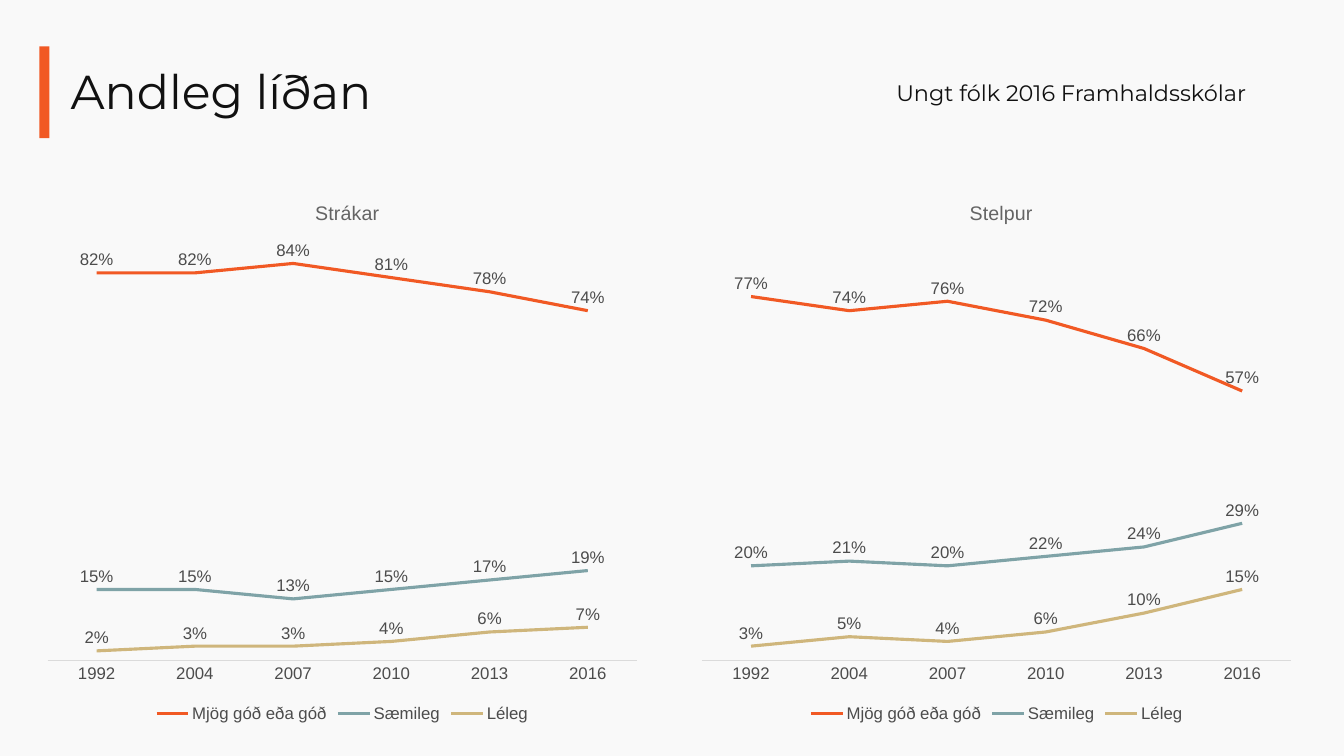
from pptx import Presentation
from pptx.chart.data import CategoryChartData as Data
from pptx.dml.color import RGBColor as Color
from pptx.enum.chart import XL_CHART_TYPE as Kind, XL_LABEL_POSITION as Spot
from pptx.enum.chart import XL_LEGEND_POSITION as Side, XL_TICK_LABEL_POSITION as Tick
from pptx.enum.chart import XL_TICK_MARK as Mark
from pptx.enum.shapes import MSO_SHAPE as Shape
from pptx.enum.text import MSO_ANCHOR as Anchor, PP_ALIGN as Align
from pptx.oxml import parse_xml
from pptx.oxml.ns import nsdecls, qn
from pptx.util import Inches, Pt

theme = {
    "back": "F9F9F9", "ink": "111111", "text": "4C4C4C", "head": "646464",
    "rule": "DBDBDB", "lines": ["F15924", "7FA3A7", "CFB67C"],
    "title": 34, "note": 16, "name": 14, "label": 12, "base": 10,
    "serif": "Montserrat", "plain": "Arial",
}


def style(font, face, size, color):
    font.name, font.size, font.bold = theme[face], Pt(theme[size]), False
    font.color.rgb = Color.from_string(theme[color])


def place(node, index, **parts):
    """Set a manual layout, given as shares of the chart's size."""
    for old in node.findall(qn("c:layout")):
        node.remove(old)
    inner = '<c:layoutTarget val="inner"/>' if "w" in parts else ""
    modes = "".join(f'<c:{key}Mode val="edge"/>' for key in "xy")
    sizes = "".join(f'<c:{key} val="{val}"/>' for key, val in parts.items())
    node.insert(index, parse_xml(
        f'<c:layout {nsdecls("c")}><c:manualLayout>{inner}{modes}{sizes}'
        '</c:manualLayout></c:layout>'))


deck = Presentation()
deck.slide_width, deck.slide_height = Inches(13.33), Inches(7.5)
slide = deck.slides.add_slide(deck.slide_layouts[5])
slide.background.fill.solid()
slide.background.fill.fore_color.rgb = Color.from_string(theme["back"])

# Accent bar
bar = slide.shapes.add_shape(Shape.RECTANGLE, Inches(0.39), Inches(0.46),
                             Inches(0.1), Inches(0.91))
bar.shadow.inherit = False
bar.fill.solid()
bar.fill.fore_color.rgb = Color.from_string(theme["lines"][0])
bar.line.fill.background()

# Title
title = slide.shapes.title
title.left, title.top = Inches(0.6), Inches(0.4)
title.width, title.height = Inches(12.34), Inches(1.06)
title.text_frame.text = "Andleg líðan"
title.text_frame.vertical_anchor = Anchor.MIDDLE
line = title.text_frame.paragraphs[0]
line.alignment, line.line_spacing = Align.LEFT, 0.9
style(line.runs[0].font, "serif", "title", "ink")

# Survey name
note = slide.shapes.add_textbox(Inches(8.89), Inches(0.79),
                                Inches(5.05), Inches(0.27))
frame = note.text_frame
frame.word_wrap = True
frame.margin_left = frame.margin_right = frame.margin_top = frame.margin_bottom = 0
frame.text = "Ungt fólk 2016 Framhaldsskólar"
style(frame.paragraphs[0].runs[0].font, "serif", "note", "ink")

# Survey results in percent
years = ["1992", "2004", "2007", "2010", "2013", "2016"]
moods = ["Mjög góð eða góð", "Sæmileg", "Léleg"]
groups = {
    "Strákar": [[82, 82, 84, 81, 78, 74], [15, 15, 13, 15, 17, 19],
                [2, 3, 3, 4, 6, 7]],
    "Stelpur": [[77, 74, 76, 72, 66, 57], [20, 21, 20, 22, 24, 29],
                [3, 5, 4, 6, 10, 15]],
}

# One line chart per group
for col, (group, rows) in enumerate(groups.items()):
    data = Data(number_format="0%")
    data.categories = years
    for mood, row in zip(moods, rows):
        data.add_series(mood, [val / 100 for val in row])
    chart = slide.shapes.add_chart(
        Kind.LINE, Inches(0.35 + 6.49 * col), Inches(1.73),
        Inches(6.09), Inches(5.48), data).chart
    style(chart.font, "plain", "base", "ink")

    # Chart title and legend
    head = chart.chart_title
    head.text_frame.text = group
    style(head.text_frame.paragraphs[0].runs[0].font, "plain", "name", "head")
    head.include_in_layout = False
    place(head.format.line and head.element if hasattr(head, "element") else None,
          1, x=0.45, y=0.04)
    chart.has_legend = True
    chart.legend.position = Side.BOTTOM
    chart.legend.include_in_layout = False
    style(chart.legend.font, "plain", "label", "text")

    # Axes
    base, scale = chart.category_axis, chart.value_axis
    for axis in (base, scale):
        axis.has_major_gridlines = False
        axis.major_tick_mark = axis.minor_tick_mark = Mark.NONE
    style(base.tick_labels.font, "plain", "label", "text")
    base.format.line.color.rgb = Color.from_string(theme["rule"])
    base.format.line.width = Pt(0.75)
    scale.minimum_scale, scale.maximum_scale = 0, 0.9
    scale.tick_label_position = Tick.NONE
    scale.format.line.fill.background()

    # Lines and their labels
    plot = chart.plots[0]
    for item, color in zip(plot.series, theme["lines"]):
        item.smooth = False
        item.format.line.color.rgb = Color.from_string(color)
        item.format.line.width = Pt(2.25)
        labels = item.data_labels
        labels.show_value, labels.position = True, Spot.ABOVE
        labels.number_format, labels.number_format_is_linked = "0%", False
        style(labels.font, "plain", "label", "text")
    area = chart.element.find(".//" + qn("c:plotArea"))
    place(area, 0, x=0.02, y=0.11, w=0.96, h=0.77)

deck.save("out.pptx")
